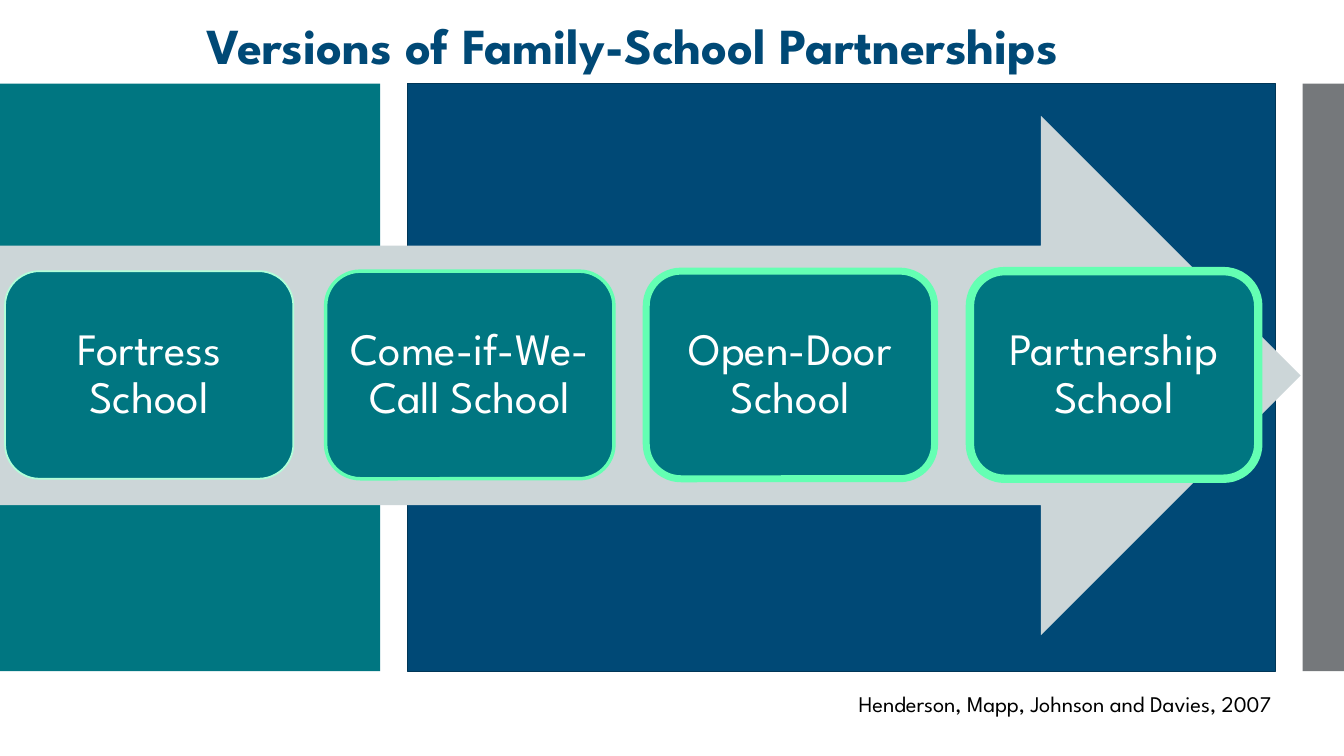
from dataclasses import dataclass

from pptx import Presentation
from pptx.dml.color import RGBColor
from pptx.enum.shapes import MSO_SHAPE
from pptx.enum.text import MSO_ANCHOR, PP_ALIGN
from pptx.util import Inches, Pt

RECTANGLE = MSO_SHAPE.RECTANGLE
ROUNDED = MSO_SHAPE.ROUNDED_RECTANGLE
RIGHT_ARROW = MSO_SHAPE.RIGHT_ARROW
LEFT, CENTER, RIGHT = PP_ALIGN.LEFT, PP_ALIGN.CENTER, PP_ALIGN.RIGHT
MIDDLE = MSO_ANCHOR.MIDDLE


@dataclass(frozen=True)
class Theme:
    font: str = "League Spartan"
    navy: str = "004976"
    navy_edge: str = "003657"
    teal: str = "007681"
    gray: str = "75787B"
    arrow: str = "CCD6D8"
    pale_mint: str = "B1FFD9"
    mint: str = "64FFB3"
    white: str = "FFFFFF"
    black: str = "000000"
    title_size: int = 36
    card_size: int = 32
    source_size: int = 16


class SlideBuilder:
    def __init__(self, page, theme):
        self.page = page
        self.theme = theme

    def shape(self, kind, place, fill, edge=None, edge_width=0):
        """Add a filled preset shape; place is left, top, width, height in inches."""
        box = self.page.shapes.add_shape(kind, *map(Inches, place))
        box.shadow.inherit = False
        box.fill.solid()
        box.fill.fore_color.rgb = RGBColor.from_string(fill)
        if edge:
            box.line.color.rgb = RGBColor.from_string(edge)
            box.line.width = Pt(edge_width)
        else:
            box.line.fill.background()
        return box

    def set_text(self, box, text, size, color, align, bold=False):
        frame = box.text_frame
        frame.word_wrap = True
        frame.text = text
        para = frame.paragraphs[0]
        para.alignment = align
        font = para.runs[0].font
        font.name = self.theme.font
        font.size = Pt(size)
        font.bold = bold
        font.color.rgb = RGBColor.from_string(color)
        return para

    def label(self, place, text, size, color, align, bold=False):
        box = self.page.shapes.add_textbox(*map(Inches, place))
        self.set_text(box, text, size, color, align, bold)

    def card(self, left, text, edge, edge_width):
        box = self.shape(ROUNDED, (left, 2.69, 2.86, 2.06), self.theme.teal, edge, edge_width)
        frame = box.text_frame
        frame.vertical_anchor = MIDDLE
        frame.margin_left = frame.margin_right = Inches(0.13)
        frame.margin_top = frame.margin_bottom = Inches(0.13)
        para = self.set_text(box, text, self.theme.card_size, self.theme.white, CENTER)
        para.line_spacing = 0.9


def main():
    deck = Presentation()
    deck.slide_width = Inches(13.33)
    deck.slide_height = Inches(7.5)
    theme = Theme()
    builder = SlideBuilder(deck.slides.add_slide(deck.slide_layouts[6]), theme)

    band_top, band_height = 0.83, 5.83
    builder.shape(RECTANGLE, (4.04, band_top, 8.61, band_height), theme.navy, theme.navy_edge, 0.85)
    builder.shape(RECTANGLE, (0, band_top, 3.77, band_height), theme.teal)
    builder.shape(RECTANGLE, (12.92, band_top, 0.41, band_height), theme.gray)

    builder.label((1.95, 0.09, 9.44, 0.71), "Versions of Family-School Partnerships",
                  theme.title_size, theme.navy, LEFT, bold=True)

    builder.shape(RIGHT_ARROW, (0, 1.15, 12.9, 5.15), theme.arrow)
    schools = [
        (0.05, "Fortress School", theme.pale_mint, 1.25),
        (3.23, "Come-if-We-Call School", theme.mint, 2.5),
        (6.41, "Open-Door School", theme.mint, 5),
        (9.62, "Partnership School", theme.mint, 6),
    ]
    for left, name, edge, edge_width in schools:
        builder.card(left, name, edge, edge_width)

    builder.label((7.17, 6.8, 5.54, 0.37), "Henderson, Mapp, Johnson and Davies, 2007",
                  theme.source_size, theme.black, RIGHT)

    deck.save("out.pptx")


if __name__ == "__main__":
    main()
